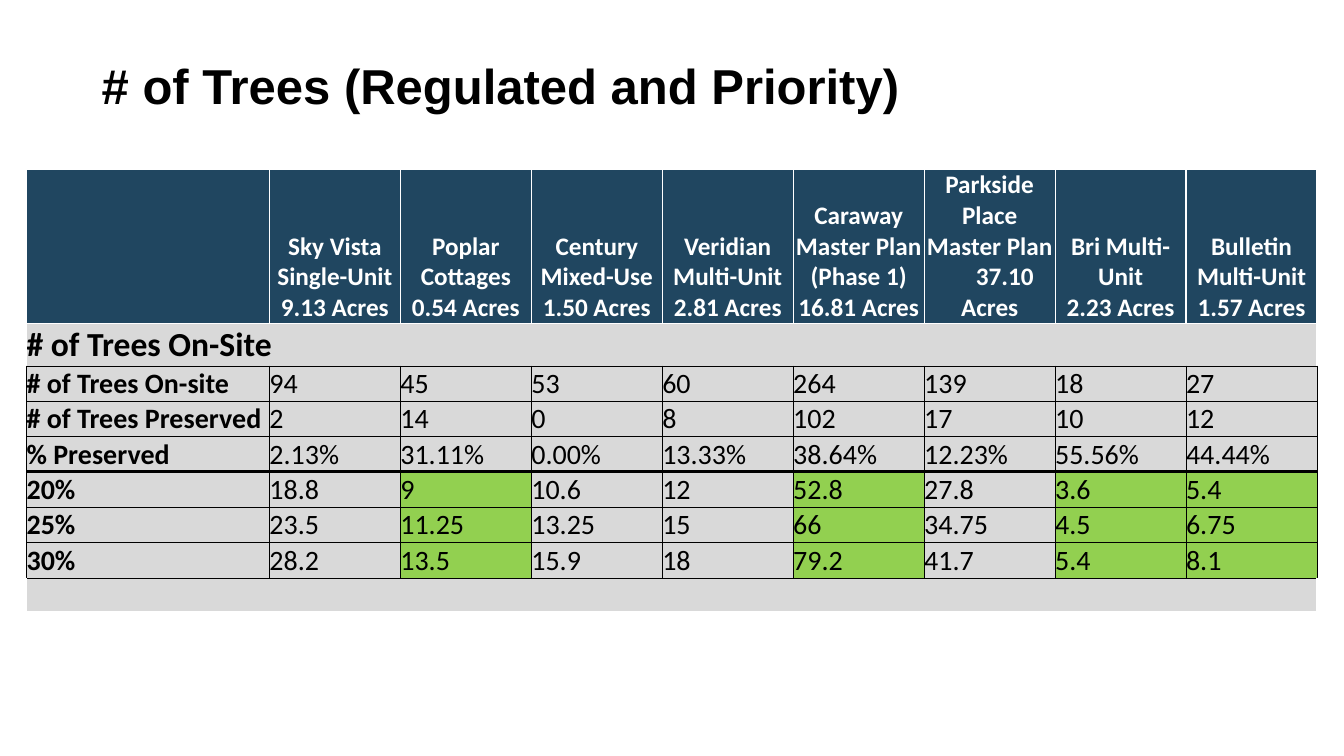
"""Build the slide comparing trees preserved on each development site."""
from dataclasses import dataclass

from lxml import etree
from pptx import Presentation
from pptx.dml.color import RGBColor
from pptx.enum import text
from pptx.oxml import ns
from pptx.util import Cm, Pt

COLOURS = {
    "header": "204660", "band": "D9D9D9", "met": "92D050",
    "light": "FFFFFF", "dark": "000000",
}
THIN, GRID, THICK = 0.25, 1, 2.25
BOTTOM, MIDDLE = text.MSO_ANCHOR.BOTTOM, text.MSO_ANCHOR.MIDDLE
LABEL_WIDTH, SITE_WIDTH = 6.12, 3.3
PRESERVED = [2, 14, 0, 8, 102, 17, 10, 12]
PARKSIDE_COLUMN = 6


@dataclass
class TableRow:
    """One row of the table and the look its cells share."""
    cells: list[str]
    height: float = 0.89
    size: float = 20
    fill: str = "band"
    ink: str = "dark"
    side: tuple[str, float] = ("dark", THIN)
    top: tuple[str, float] = ("dark", THIN)
    bottom: tuple[str, float] = ("dark", THIN)
    anchor: text.MSO_ANCHOR = BOTTOM
    align: text.PP_ALIGN = text.PP_ALIGN.LEFT
    bold_values: bool = False
    merged: bool = False
    threshold: bool = False


WHITE_GRID = ("light", GRID)
ROWS = [
    TableRow(
        ["", "Sky Vista Single-Unit 9.13 Acres", "Poplar\nCottages 0.54 Acres",
         "Century Mixed-Use 1.50 Acres", "Veridian Multi-Unit 2.81 Acres",
         "Caraway Master Plan\n(Phase 1) 16.81 Acres",
         "Parkside\vPlace\vMaster Plan\n37.10\nAcres",
         "Bri Multi-Unit\n2.23 Acres", "Bulletin Multi-Unit 1.57 Acres"],
        height=3.88, size=18, fill="header", ink="light", side=WHITE_GRID,
        top=WHITE_GRID, bottom=WHITE_GRID, align=text.PP_ALIGN.CENTER,
        bold_values=True),
    TableRow(["# of Trees On-Site"] + [""] * 8, height=1.07, size=24,
             side=WHITE_GRID, top=WHITE_GRID, merged=True),
    TableRow(["# of Trees On-site", "94", "45", "53", "60", "264", "139", "18", "27"],
             anchor=MIDDLE),
    TableRow(["# of Trees Preserved"] + [str(count) for count in PRESERVED],
             anchor=MIDDLE),
    TableRow(["% Preserved", "2.13%", "31.11%", "0.00%", "13.33%", "38.64%",
              "12.23%", "55.56%", "44.44%"], bottom=("dark", THICK)),
    TableRow(["20%", "18.8", "9", "10.6", "12", "52.8", "27.8", "3.6", "5.4"],
             top=("dark", THICK), threshold=True),
    TableRow(["25%", "23.5", "11.25", "13.25", "15", "66", "34.75", "4.5", "6.75"],
             threshold=True),
    TableRow(["30%", "28.2", "13.5", "15.9", "18", "79.2", "41.7", "5.4", "8.1"],
             threshold=True),
    TableRow([""] * 9, height=0.86, size=18, side=WHITE_GRID,
             bottom=WHITE_GRID, merged=True),
]


def colour(name: str) -> RGBColor:
    """Return the named colour."""
    return RGBColor.from_string(COLOURS[name])


def add_borders(cell, row: TableRow) -> None:
    """Draw the four borders of a cell."""
    properties = cell._tc.get_or_add_tcPr()
    sides = {"a:lnL": row.side, "a:lnR": row.side,
             "a:lnT": row.top, "a:lnB": row.bottom}
    for tag, (name, width) in sides.items():
        line = etree.SubElement(properties, ns.qn(tag), w=str(int(Pt(width))))
        fill = etree.SubElement(line, ns.qn("a:solidFill"))
        etree.SubElement(fill, ns.qn("a:srgbClr"), val=COLOURS[name])


def fill_cell(cell, row: TableRow, column: int) -> None:
    """Write and format one cell, marking thresholds that the site meets."""
    value = row.cells[column]
    met = row.threshold and column > 0 and float(value) <= PRESERVED[column - 1]
    add_borders(cell, row)
    cell.fill.solid()
    cell.fill.fore_color.rgb = colour("met" if met else row.fill)
    cell.margin_left = cell.margin_right = cell.margin_top = cell.margin_bottom = 0
    cell.vertical_anchor = row.anchor
    cell.text_frame.text = value
    for para in cell.text_frame.paragraphs:
        para.alignment = row.align
        para.font.name = "Calibri"
        para.font.size = Pt(row.size)
        para.font.bold = row.bold_values or column == 0
        para.font.color.rgb = colour(row.ink)


def add_tree_table(page) -> None:
    """Add the table of tree counts."""
    count = len(ROWS[0].cells)
    frame = page.shapes.add_table(
        len(ROWS), count, Cm(0.67), Cm(4.27),
        Cm(LABEL_WIDTH + SITE_WIDTH * (count - 1)),
        Cm(sum(row.height for row in ROWS)))
    table = frame.table
    table.first_row = table.horz_banding = False
    for index, column in enumerate(table.columns):
        column.width = Cm(SITE_WIDTH if index else LABEL_WIDTH)
    for index, row in enumerate(ROWS):
        table.rows[index].height = Cm(row.height)
        for column in range(count):
            fill_cell(table.cell(index, column), row, column)
        if row.merged:
            table.cell(index, 0).merge(table.cell(index, count - 1))
    acreage = table.cell(0, PARKSIDE_COLUMN).text_frame.paragraphs[1]
    acreage._p.get_or_add_pPr().set("marL", str(int(Cm(0.76))))


def add_title(page) -> None:
    """Place and format the title."""
    box = page.shapes.title
    box.left, box.top, box.width, box.height = Cm(2.31), Cm(1.37), Cm(29.21), Cm(1.65)
    frame = box.text_frame
    frame.text = "# of Trees (Regulated and Priority)"
    frame.word_wrap = True
    frame.auto_size = text.MSO_AUTO_SIZE.NONE
    frame.vertical_anchor = BOTTOM
    para = frame.paragraphs[0]
    para.alignment = text.PP_ALIGN.LEFT
    para.line_spacing = 0.9
    para.font.name = "Arial"
    para.font.size = Pt(35)
    para.font.bold = True
    para.font.color.rgb = colour("dark")


def main() -> None:
    """Build and save the deck."""
    deck = Presentation()
    deck.slide_width, deck.slide_height = Cm(33.87), Cm(19.05)
    page = deck.slides.add_slide(deck.slide_layouts[5])
    add_tree_table(page)
    add_title(page)
    deck.save("out.pptx")


if __name__ == "__main__":
    main()
